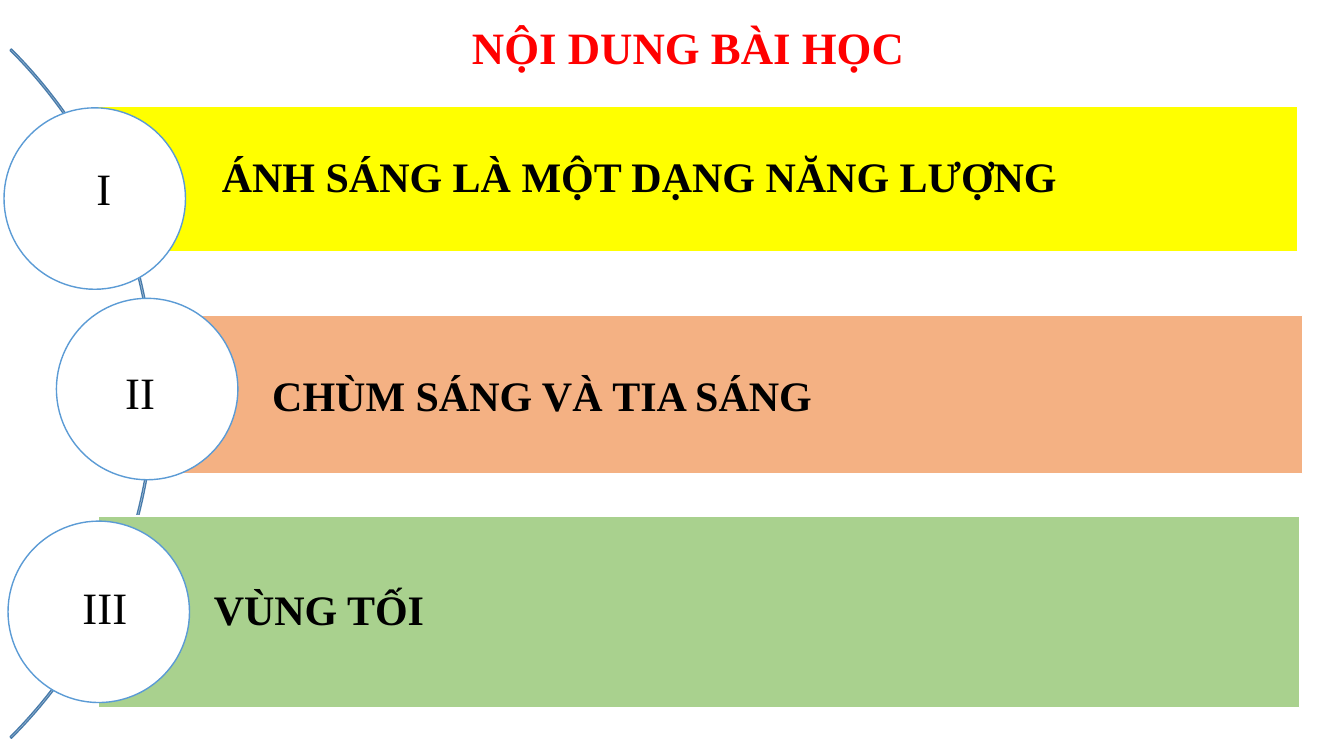
from dataclasses import dataclass

from pptx import Presentation
from pptx.dml.color import RGBColor
from pptx.enum.shapes import MSO_SHAPE
from pptx.enum.text import MSO_ANCHOR, PP_ALIGN
from pptx.util import Inches, Pt

RECT, OVAL, ARC = MSO_SHAPE.RECTANGLE, MSO_SHAPE.OVAL, MSO_SHAPE.BLOCK_ARC
MIDDLE = MSO_ANCHOR.MIDDLE
LEFT, CENTER = PP_ALIGN.LEFT, PP_ALIGN.CENTER


@dataclass(frozen=True)
class Theme:
    """Colours, font and type sizes of the slide."""
    white: str = "FFFFFF"
    black: str = "000000"
    red: str = "FF0000"
    yellow: str = "FFFF00"
    orange: str = "F4B183"
    green: str = "A9D18E"
    ring: str = "5B9BD5"
    arc: str = "497CAB"
    font: str = "Times New Roman"
    heading: int = 32
    body: int = 30


THEME = Theme()
BAR_INSET = 1.14
CIRCLE = 1.8
TOPICS = [
    dict(text="ÁNH SÁNG LÀ MỘT DẠNG NĂNG LƯỢNG", color=THEME.yellow,
         box=(0.96, 1.06, 11.91, 1.44), indent=0.1, spacing=0.9,
         circle=(-0.92, 0.01), numeral="I", label=(-0.29, 0.48, 0.72)),
    dict(text="CHÙM SÁNG VÀ TIA SÁNG", color=THEME.orange,
         box=(1.47, 3.13, 11.45, 1.57), indent=0.09, spacing=1.0,
         circle=(-0.91, -0.17), numeral="II", label=(-0.44, 0.43, 0.72)),
    dict(text="VÙNG TỐI", color=THEME.green,
         box=(0.98, 5.12, 11.91, 1.9), indent=0, spacing=0.9,
         circle=(-0.9, 0.05), numeral="III", label=(-0.44, 0.57, 1)),
]


def add_shape(slide, kind, box, fill=None, line=THEME.white):
    """Draw a flat preset shape in the box and return it."""
    sp = slide.shapes.add_shape(kind, *map(Inches, box))
    sp.shadow.inherit = False
    if fill:
        sp.fill.solid()
        sp.fill.fore_color.rgb = RGBColor.from_string(fill)
    else:
        sp.fill.background()
    sp.line.color.rgb = RGBColor.from_string(line)
    sp.line.width = Pt(1)
    return sp


def set_text(sp, text, size=THEME.heading, color=THEME.black, bold=False,
             align=CENTER, spacing=1.0):
    """Write one formatted paragraph into the shape."""
    tf = sp.text_frame
    tf.word_wrap = True
    tf.vertical_anchor = MIDDLE
    p = tf.paragraphs[0]
    p.alignment = align
    p.line_spacing = spacing
    r = p.add_run()
    r.text = text
    r.font.name = THEME.font
    r.font.size = Pt(size)
    r.font.bold = bold
    r.font.color.rgb = RGBColor.from_string(color)


def add_title(slide, box):
    """Place the red heading."""
    sp = add_shape(slide, RECT, box)
    set_text(sp, "NỘI DUNG BÀI HỌC", color=THEME.red, bold=True)


def add_arc(slide, box):
    """Draw the thin arc that links the circles."""
    sp = add_shape(slide, ARC, box, line=THEME.arc)
    for i, value in enumerate((189, 27, 0.002)):
        sp.adjustments[i] = value


def add_topic(slide, box, text, color, indent, spacing, circle, numeral, label):
    """Draw a topic bar with its circle and numeral relative to the box."""
    x, y = box[:2]
    bar = add_shape(slide, RECT, box, color)
    tf = bar.text_frame
    tf.margin_left = Inches(BAR_INSET + indent)
    tf.margin_right = tf.margin_top = tf.margin_bottom = Inches(0.08)
    set_text(bar, text, THEME.body, bold=True, align=LEFT, spacing=spacing)
    dx, dy = circle
    add_shape(slide, OVAL, (x + dx, y + dy, CIRCLE, CIRCLE),
              THEME.white, THEME.ring)
    dx, dy, width = label
    sp = add_shape(slide, OVAL, (x + dx, y + dy, width, 0.65), THEME.white)
    set_text(sp, numeral)


def main():
    """Build and save the lesson contents slide."""
    prs = Presentation()
    prs.slide_width, prs.slide_height = Inches(13.33), Inches(7.5)
    slide = prs.slides.add_slide(prs.slide_layouts[6])
    add_arc(slide, (-8.14, -0.93, 9.67, 9.67))
    for topic in TOPICS:
        add_topic(slide, **topic)
    add_title(slide, (3.13, 0.15, 7.39, 0.63))
    prs.save("out.pptx")


if __name__ == "__main__":
    main()
